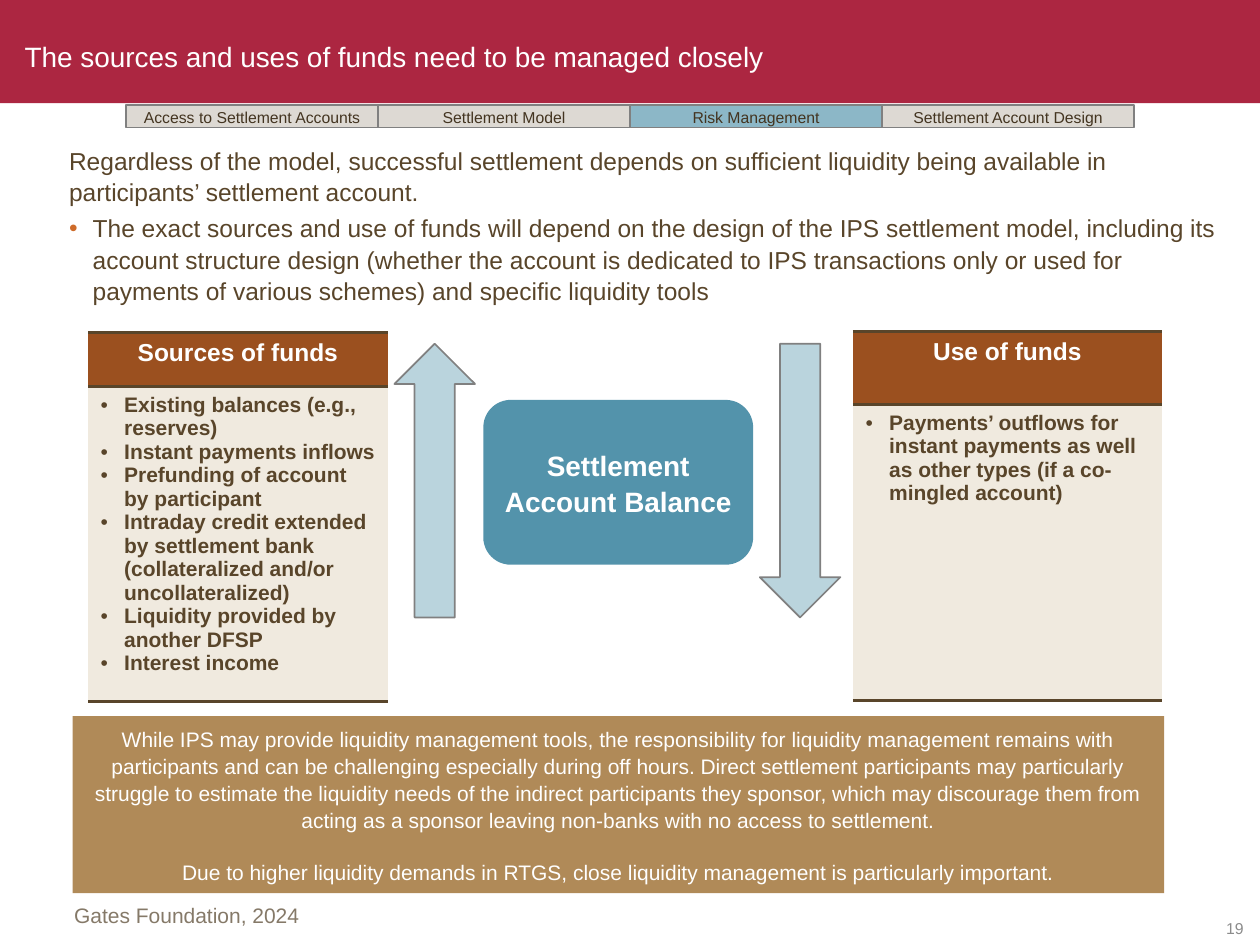
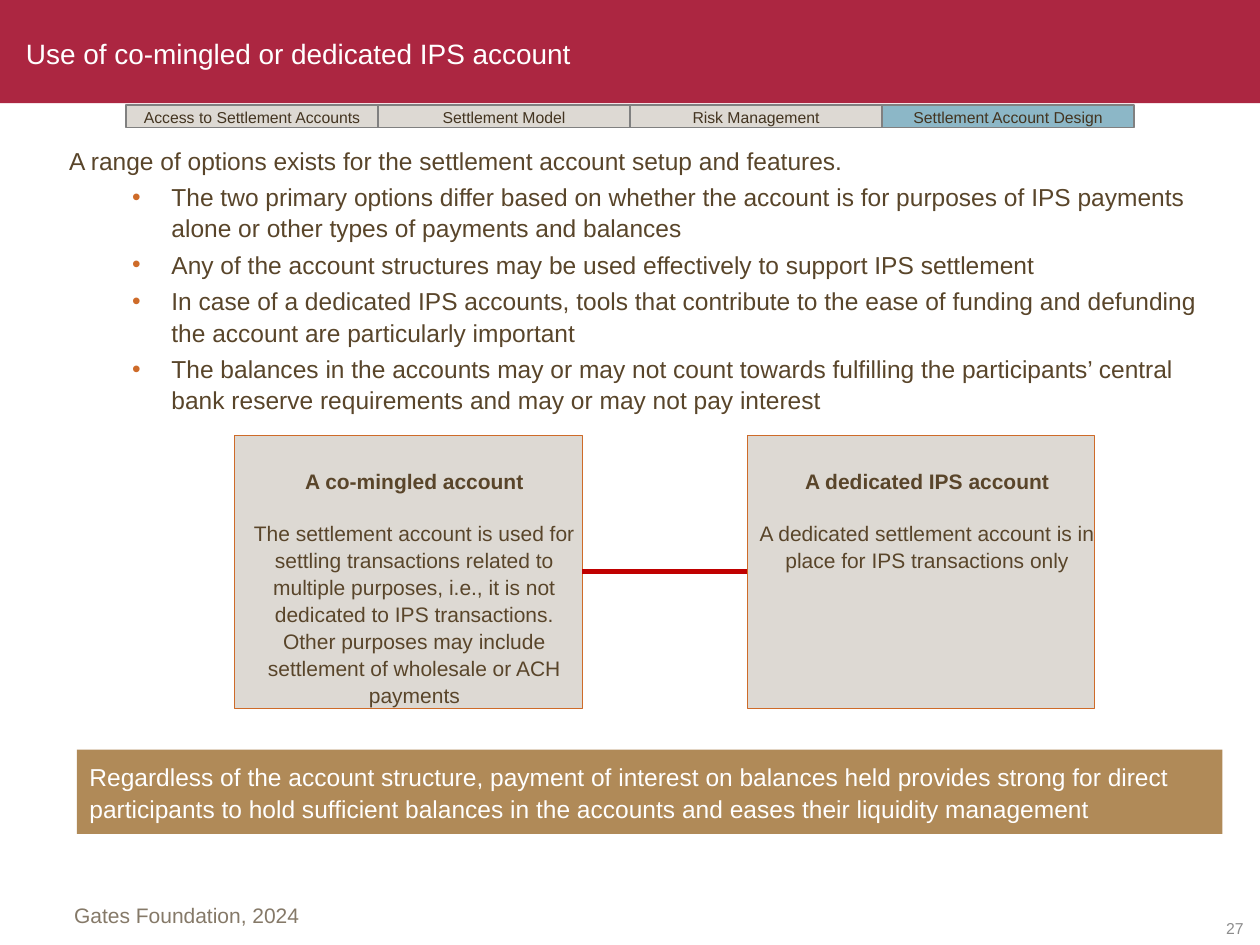
from dataclasses import dataclass

from lxml import etree
from pptx import Presentation
from pptx.dml.color import RGBColor
from pptx.enum.shapes import MSO_CONNECTOR, MSO_SHAPE
from pptx.enum.text import MSO_ANCHOR, PP_ALIGN
from pptx.oxml.ns import qn
from pptx.util import Pt

RECT = MSO_SHAPE.RECTANGLE
ROUND = MSO_SHAPE.ROUNDED_RECTANGLE
ARROW = MSO_SHAPE.UP_ARROW
LINE = MSO_CONNECTOR.STRAIGHT
TOP, MID, LOW = MSO_ANCHOR.TOP, MSO_ANCHOR.MIDDLE, MSO_ANCHOR.BOTTOM
LEFT, MIDDLE, RIGHT = PP_ALIGN.LEFT, PP_ALIGN.CENTER, PP_ALIGN.RIGHT

FONT = "Arial"
RED = "AC2641"
WHITE = "FFFFFF"
BROWN = "59452A"
DARK = "433420"
ORANGE = "CE6B29"
RUST = "9B501F"
CREAM = "F0EADF"
TAN = "B08A58"
STONE = "DDD9D3"
SKY = "8CB7C7"
PALE = "BAD4DD"
TEAL = "5393AB"
GRAY = "808080"
SILVER = "8C8C8C"
TAUPE = "857968"
CRIMSON = "C00000"

PITCH = 1.07
STEPS = ["Access to Settlement Accounts", "Settlement Model",
         "Risk Management", "Settlement Account Design"]


@dataclass
class Box:
    left: float
    top: float
    width: float
    height: float

    def spot(self) -> tuple:
        return tuple(Pt(v) for v in (self.left, self.top, self.width, self.height))


@dataclass
class Para:
    text: str
    gap: float = 0
    bold: bool = False
    left: float = 0
    hang: float = 0
    mark: str = ""


@dataclass
class Panel:
    box: Box
    head: str
    rows: tuple
    items: list


@dataclass
class Option:
    box: Box
    name: str
    text: str


def color(code: str) -> RGBColor:
    return RGBColor.from_string(code)


def bullet(para, item: Para) -> None:
    props = para._p.get_or_add_pPr()
    props.set("marL", str(Pt(item.left)))
    props.set("indent", str(Pt(-item.hang)))
    tint = etree.SubElement(props, qn("a:buClr"))
    etree.SubElement(tint, qn("a:srgbClr"), val=item.mark)
    etree.SubElement(props, qn("a:buFont"), typeface=FONT)
    etree.SubElement(props, qn("a:buChar"), char="•")


def write(frame, items, size: float = 12, ink: str = BROWN, align=LEFT,
          pitch: float = PITCH, anchor=None, inset: tuple = ()) -> None:
    if anchor is not None:
        frame.word_wrap = True
        frame.vertical_anchor = anchor
    if inset:
        (frame.margin_left, frame.margin_top,
         frame.margin_right, frame.margin_bottom) = map(Pt, inset)
    if isinstance(items, str):
        items = [Para(items)]
    for i, item in enumerate(items):
        para = frame.paragraphs[0] if i == 0 else frame.add_paragraph()
        if item.mark:
            bullet(para, item)
        para.alignment = align
        para.line_spacing = pitch
        if item.gap:
            para.space_before = Pt(item.gap)
        run = para.add_run()
        run.text = item.text
        font = run.font
        font.name, font.size, font.bold = FONT, Pt(size), item.bold
        font.color.rgb = color(ink)


def label(slide, box: Box, items, anchor=TOP, **style) -> None:
    text = slide.shapes.add_textbox(*box.spot())
    write(text.text_frame, items, anchor=anchor, **style)


def shape(slide, kind, box: Box, fill: str, edge: str = "", weight: float = 1):
    item = slide.shapes.add_shape(kind, *box.spot())
    item.shadow.inherit = False
    item.fill.solid()
    item.fill.fore_color.rgb = color(fill)
    if edge:
        item.line.color.rgb = color(edge)
        item.line.width = Pt(weight)
    else:
        item.line.fill.background()
    return item


def border(cell) -> None:
    props = cell._tc.get_or_add_tcPr()
    for side in "LRTB":
        line = etree.SubElement(props, qn(f"a:ln{side}"), w=str(Pt(2)))
        if side in "LR":
            etree.SubElement(line, qn("a:noFill"))
        else:
            fill = etree.SubElement(line, qn("a:solidFill"))
            etree.SubElement(fill, qn("a:srgbClr"), val=BROWN)


def funds(slide, panel: Panel) -> None:
    table = slide.shapes.add_table(2, 1, *panel.box.spot()).table
    table.first_row = table.horz_banding = False
    items = [Para(t, bold=True, left=13.5, hang=13.5, mark=BROWN)
             for t in panel.items]
    parts = [(RUST, [Para(panel.head, bold=True)], 14, WHITE, MIDDLE),
             (CREAM, items, 12, BROWN, LEFT)]
    for i, (fill, text, size, ink, align) in enumerate(parts):
        table.rows[i].height = Pt(panel.rows[i])
        cell = table.cell(i, 0)
        border(cell)
        cell.fill.solid()
        cell.fill.fore_color.rgb = color(fill)
        write(cell.text_frame, text, size=size, ink=ink, align=align, pitch=1.0)


def option(slide, item: Option):
    card = shape(slide, RECT, item.box, STONE, ORANGE, 0.25)
    write(card.text_frame, [Para(item.name, bold=True), Para(item.text, gap=14.4)],
          align=MIDDLE, anchor=TOP, inset=(7.2, 18, 0, 3.6))
    return card


def band(slide, box: Box, items, **style) -> None:
    item = shape(slide, RECT, box, TAN)
    write(item.text_frame, items, ink=WHITE, anchor=MID,
          inset=(7.2, 3.6, 7.2, 3.6), **style)


def start(deck, title: str, spot: Box, page: str, step: int):
    slide = deck.slides.add_slide(deck.slide_layouts[6])
    shape(slide, RECT, Box(0, 0, 720, 59), RED)
    label(slide, spot, title, size=16, ink=WHITE, anchor=MID,
          inset=(7.2, 0, 7.2, 0))
    for i, name in enumerate(STEPS):
        tab = shape(slide, RECT, Box(72 + 144 * i, 59.8, 144, 13),
                    SKY if i == step else STONE, GRAY)
        write(tab.text_frame, name, size=9, ink=DARK, align=MIDDLE,
              anchor=MID, inset=(0, 3.6, 0, 3.6))
    label(slide, Box(35.3, 511.2, 243, 28.8), "Gates Foundation, 2024", ink=TAUPE)
    label(slide, Box(677.5, 511.2, 42.5, 28.8), page, size=9, ink=SILVER,
          align=RIGHT, anchor=LOW, inset=(9.4, 4.3, 9.4, 4.3))
    return slide


def liquid(deck) -> None:
    slide = start(deck, "The sources and uses of funds need to be managed closely",
                  Box(7, 21.8, 518, 19.4), "19", 2)
    label(slide, Box(32.4, 78.5, 673, 94), [
        Para("Regardless of the model, successful settlement depends on sufficient "
             "liquidity being available in participants’ settlement account."),
        Para("The exact sources and use of funds will depend on the design of the IPS "
             "settlement model, including its account structure design (whether the "
             "account is dedicated to IPS transactions only or used for payments of "
             "various schemes) and specific liquidity tools",
             gap=2.8, left=13.5, hang=13.5, mark=ORANGE)], size=14)
    panels = [
        Panel(Box(50.3, 190, 171.4, 200), "Sources of funds", (31, 169), [
            "Existing balances (e.g., reserves)",
            "Instant payments inflows",
            "Prefunding of account by participant",
            "Intraday credit extended by settlement bank "
            "(collateralized and/or uncollateralized)",
            "Liquidity provided by another DFSP",
            "Interest income"]),
        Panel(Box(487.4, 189.4, 176.6, 211), "Use of funds", (42, 169), [
            "Payments’ outflows for instant payments as well as other types "
            "(if a co-mingled account)"])]
    for panel in panels:
        funds(slide, panel)
    for left, turn in ((225.4, 0), (434.2, 180)):
        arrow = shape(slide, ARROW, Box(left, 196.4, 46, 156.4), PALE, GRAY)
        arrow.rotation = turn
    core = shape(slide, ROUND, Box(276.2, 228.5, 154.2, 94.2), TEAL)
    write(core.text_frame, [Para("Settlement Account Balance", bold=True)],
          size=16, ink=WHITE, align=MIDDLE, anchor=MID)
    band(slide, Box(41.5, 409.2, 623.7, 101.2), [
        Para("While IPS may provide liquidity management tools, the responsibility for "
             "liquidity management remains with participants and can be challenging "
             "especially during off hours. Direct settlement participants may "
             "particularly struggle to estimate the liquidity needs of the indirect "
             "participants they sponsor, which may discourage them from acting as a "
             "sponsor leaving non-banks with no access to settlement."),
        Para("Due to higher liquidity demands in RTGS, close liquidity management is "
             "particularly important.", gap=14.4)], align=MIDDLE)


def account(deck) -> None:
    slide = start(deck, "Use of co-mingled or dedicated IPS account",
                  Box(7.8, 20.2, 529, 19.4), "27", 3)
    points = [
        "The two primary options differ based on whether the account is for purposes "
        "of IPS payments alone or other types of payments and balances",
        "Any of the account structures may be used effectively to support IPS settlement",
        "In case of a dedicated IPS accounts, tools that contribute to the ease of "
        "funding and defunding the account are particularly important",
        "The balances in the accounts may or may not count towards fulfilling the "
        "participants’ central bank reserve requirements and may or may not pay interest"]
    lead = Para("A range of options exists for the settlement account setup and features.")
    label(slide, Box(32.4, 78.5, 673, 143),
          [lead] + [Para(t, gap=2.8, left=58.5, hang=22.5, mark=ORANGE) for t in points],
          size=14)
    first, second = [option(slide, item) for item in (
        Option(Box(134, 248.8, 198.6, 155.8), "A co-mingled account",
               "The settlement account is used for settling transactions related to "
               "multiple purposes, i.e., it is not dedicated to IPS transactions. Other "
               "purposes may include settlement of wholesale or ACH payments"),
        Option(Box(427, 248.8, 198.6, 155.8), "A dedicated IPS account",
               "A dedicated settlement account is in place for IPS transactions only"))]
    link = slide.shapes.add_connector(LINE, 0, 0, 0, 0)
    link.begin_connect(first, 3)
    link.end_connect(second, 1)
    link.line.color.rgb = color(CRIMSON)
    link.line.width = Pt(3)
    etree.SubElement(link._element.spPr, qn("a:effectLst"))
    band(slide, Box(44, 428.4, 654.5, 48.2),
         "Regardless of the account structure, payment of interest on balances held "
         "provides strong for direct participants to hold sufficient balances in the "
         "accounts and eases their liquidity management", size=14)


def main() -> None:
    deck = Presentation()
    deck.slide_width, deck.slide_height = Pt(720), Pt(540)
    liquid(deck)
    account(deck)
    deck.save("out.pptx")


if __name__ == "__main__":
    main()
